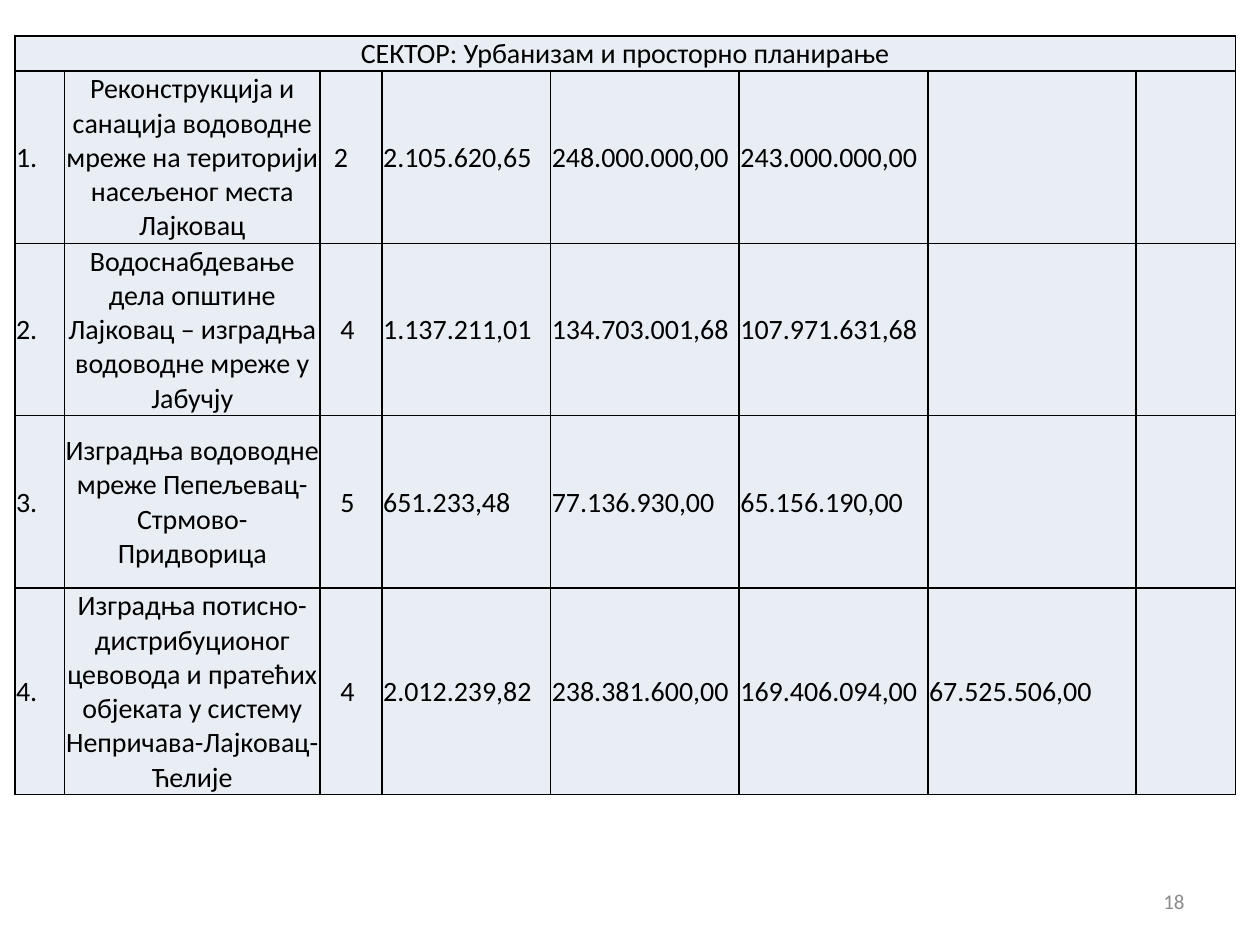
from lxml import etree
from pptx import Presentation
from pptx.dml.color import RGBColor
from pptx.enum.text import MSO_ANCHOR, PP_ALIGN
from pptx.oxml.ns import qn
from pptx.util import Pt

MIDDLE = MSO_ANCHOR.MIDDLE
CENTER, JUSTIFY, RIGHT = PP_ALIGN.CENTER, PP_ALIGN.JUSTIFY, PP_ALIGN.RIGHT

FONT = "Calibri"
BLACK, GREY, CELL_FILL = "000000", "8C8C8C", "E9EDF4"
NAME_COL, COUNT_COL = 1, 2
COL_WIDTHS = [28.3, 146.2, 35.3, 96.4, 107.8, 107.8, 119, 56.8]
HEADING_HEIGHT = 20
ROW_HEIGHTS = [98.5, 98.5, 98.5, 118]
COUNT_INDENTS = [7.2, 10.8, 10.8, 10.8]

SECTOR = "СЕКТОР: Урбанизам и просторно планирање"
PROJECTS = [
    ["1.", "Реконструкција и санација водоводне мреже на територији насељеног места Лајковац",
     "2", "2.105.620,65", "248.000.000,00", "243.000.000,00", "", ""],
    ["2.", "Водоснабдевање дела општине Лајковац – изградња водоводне мреже у Јабучју",
     "4", "1.137.211,01", "134.703.001,68", "107.971.631,68", "", ""],
    ["3.", "Изградња водоводне мреже Пепељевац-Стрмово-Придворица",
     "5", "651.233,48", "77.136.930,00", "65.156.190,00", "", ""],
    ["4.", "Изградња потисно-дистрибуционог цевовода и пратећих објеката у систему "
     "Непричава-Лајковац-Ћелије",
     "4", "2.012.239,82", "238.381.600,00", "169.406.094,00", "67.525.506,00", ""],
]


def rgb(color):
    return RGBColor.from_string(color)


def add_run(p, text, size, color):
    r = p.add_run()
    r.text = text
    r.font.name = FONT
    r.font.size = Pt(size)
    r.font.color.rgb = rgb(color)


def set_borders(cell, color=BLACK, width=1):
    """Draw all four cell edges; edges must come before the fill in tcPr."""
    tc_pr = cell._tc.get_or_add_tcPr()
    for i, edge in enumerate(("a:lnL", "a:lnR", "a:lnT", "a:lnB")):
        ln = etree.Element(qn(edge), w=str(Pt(width)))
        fill = etree.SubElement(ln, qn("a:solidFill"))
        etree.SubElement(fill, qn("a:srgbClr"), val=color)
        tc_pr.insert(i, ln)


def format_cell(cell):
    cell.fill.solid()
    cell.fill.fore_color.rgb = rgb(CELL_FILL)
    set_borders(cell)
    cell.vertical_anchor = MIDDLE
    cell.margin_left = cell.margin_right = cell.margin_top = Pt(0.7)
    cell.margin_bottom = Pt(0)


def write_cell(cell, text, align, indent=0):
    if not text:
        return
    cell.margin_left += Pt(indent)
    p = cell.text_frame.paragraphs[0]
    p.alignment = align
    add_run(p, text, 16, BLACK)


def add_project_table(s):
    heights = [HEADING_HEIGHT] + ROW_HEIGHTS
    frame = s.shapes.add_table(len(heights), len(COL_WIDTHS), Pt(8.5), Pt(20.6),
                               Pt(sum(COL_WIDTHS)), Pt(sum(heights)))
    table = frame.table
    for column, width in zip(table.columns, COL_WIDTHS):
        column.width = Pt(width)
    for row, height in zip(table.rows, heights):
        row.height = Pt(height)
    for cell in table.iter_cells():
        format_cell(cell)

    table.cell(0, 0).merge(table.cell(0, len(COL_WIDTHS) - 1))
    write_cell(table.cell(0, 0), SECTOR, CENTER)
    for i, (project, count_indent) in enumerate(zip(PROJECTS, COUNT_INDENTS), 1):
        for j, text in enumerate(project):
            write_cell(table.cell(i, j), text,
                       CENTER if j == NAME_COL else JUSTIFY,
                       count_indent if j == COUNT_COL else 0)


def add_page_number(s, number):
    sp = s.shapes.add_textbox(Pt(516), Pt(500.5), Pt(168), Pt(28.75))
    tf = sp.text_frame
    tf.word_wrap = True
    tf.vertical_anchor = MIDDLE
    p = tf.paragraphs[0]
    p.alignment = RIGHT
    add_run(p, number, 12, GREY)


def main():
    prs = Presentation()
    prs.slide_width, prs.slide_height = Pt(720), Pt(540)
    s = prs.slides.add_slide(prs.slide_layouts.get_by_name("Blank"))
    add_page_number(s, "18")
    add_project_table(s)
    prs.save("out.pptx")


if __name__ == "__main__":
    main()
